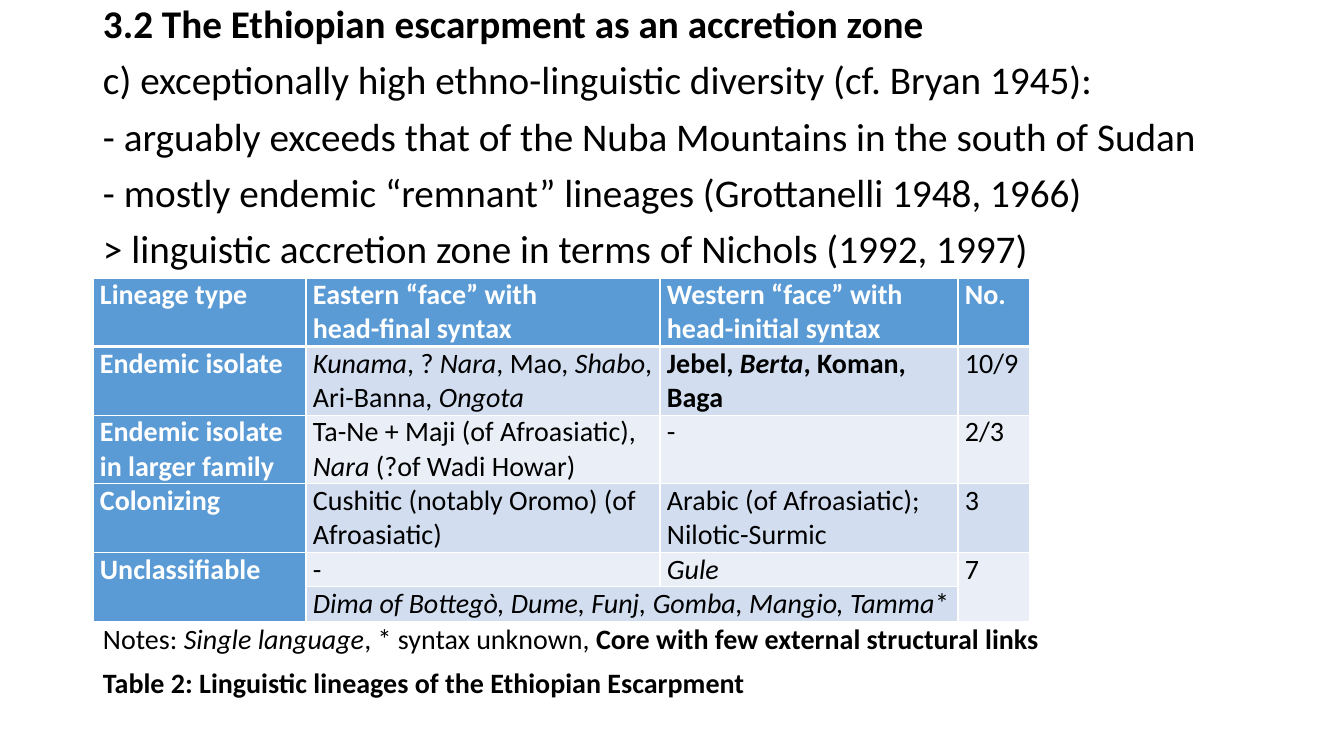
from pptx import Presentation
from pptx import util as u
from pptx.dml.color import RGBColor
from pptx.enum import text
from pptx.oxml import parse_xml
from pptx.oxml.ns import nsdecls

SCALE = 914400 / 100.8
BLUE, WHITE, BLACK = "5B9BD5", "FFFFFF", "000000"
BANDS = ["D2DEEF", "EAEFF7"]
COLS = [213, 354, 298, 72]
ROWS = [68, 68, 68, 68, 34, 34]
HEAD = "3.2 The Ethiopian escarpment as an accretion zone"
POINTS = [
    "c) exceptionally high ethno-linguistic diversity (cf. Bryan 1945):",
    "- arguably exceeds that of the Nuba Mountains in the south of Sudan",
    "- mostly endemic “remnant” lineages (Grottanelli 1948, 1966)",
    "> linguistic accretion zone in terms of Nichols (1992, 1997)",
]
NOTES = [
    "Notes: _Single language_, * syntax unknown, |Core with few external structural links|",
    "|Table 2: Linguistic lineages of the Ethiopian Escarpment|",
]
CELLS = [
    ["Lineage type", "Eastern “face” with\nhead-final syntax",
     "Western “face” with\nhead-initial syntax", "No."],
    ["Endemic isolate", "_Kunama_, ? _Nara_, Mao, _Shabo_, Ari-Banna, _Ongota_",
     "|Jebel, _Berta_, Koman, Baga|", "10/9"],
    ["Endemic isolate in larger family",
     "Ta-Ne + Maji (of Afroasiatic), _Nara_ (?of Wadi Howar)", "-", "2/3"],
    ["Colonizing", "Cushitic (notably Oromo) (of Afroasiatic)",
     "Arabic (of Afroasiatic); Nilotic-Surmic", "3"],
    ["Unclassifiable", "-", "_Gule_", "7"],
    ["", "_Dima of Bottegò, Dume, Funj, Gomba, Mangio, Tamma_*", "", ""],
]


def px(n):
    return u.Emu(round(n * SCALE))


def rgb(code):
    return RGBColor.from_string(code)


def write(frame, lines, size=20, color=BLACK, bold=False, lead=None, gap=0):
    frame.word_wrap = True
    for n, line in enumerate(lines):
        para = frame.add_paragraph() if n else frame.paragraphs[0]
        para.alignment = text.PP_ALIGN.LEFT
        para.line_spacing = lead
        para.space_before = u.Pt(gap)
        for b, part in enumerate(line.split("|")):
            for i, piece in enumerate(part.split("_")):
                if not piece:
                    continue
                run = para.add_run()
                run.text = piece
                font = run.font
                font.name, font.size = "Calibri", u.Pt(size)
                font.bold = bold or b % 2 == 1
                font.italic = i % 2 == 1
                font.color.rgb = rgb(color)


def place(shape, top, high, lines, **form):
    shape.left, shape.top = px(93), px(top)
    shape.width, shape.height = px(1159), px(high)
    frame = shape.text_frame
    frame.auto_size = text.MSO_AUTO_SIZE.NONE
    frame.vertical_anchor = text.MSO_ANCHOR.TOP
    frame.margin_left = frame.margin_right = px(10)
    frame.margin_top = frame.margin_bottom = 0
    write(frame, lines, lead=0.9, gap=10, **form)


def edge(cell, row):
    wide = {"T": 3 if row == 1 else 1, "B": 3 if row == 0 else 1}
    props = cell._tc.get_or_add_tcPr()
    for side in "LRTB":
        props.append(parse_xml(
            f'<a:ln{side} {nsdecls("a")} w="{u.Pt(wide.get(side, 1))}">'
            f'<a:solidFill><a:srgbClr val="{WHITE}"/></a:solidFill></a:ln{side}>'))


def draw_cell(cell, row, col, words):
    key = row == 0 or col == 0
    cell.margin_left = cell.margin_right = px(7)
    cell.margin_top = cell.margin_bottom = 0
    edge(cell, row)
    cell.fill.solid()
    band = BANDS[0 if row == 5 and col < 3 else (row - 1) % 2]
    cell.fill.fore_color.rgb = rgb(BLUE if key else band)
    write(cell.text_frame, words.split("\n"), color=WHITE if key else BLACK, bold=key)


def draw_table(slide):
    table = slide.shapes.add_table(
        len(ROWS), len(COLS), px(93), px(278), px(sum(COLS)), px(sum(ROWS))).table
    table.first_col = True
    for col, wide in zip(table.columns, COLS):
        col.width = px(wide)
    for row, high in zip(table.rows, ROWS):
        row.height = px(high)
    for r, line in enumerate(CELLS):
        for c, words in enumerate(line):
            draw_cell(table.cell(r, c), r, c, words)
    for start, end in [((4, 0), (5, 0)), ((4, 3), (5, 3)), ((5, 1), (5, 2))]:
        table.cell(*start).merge(table.cell(*end))


def add_box(slide, *args, **form):
    place(slide.shapes.add_textbox(0, 0, 0, 0), *args, **form)


def main():
    deck = Presentation()
    deck.slide_width, deck.slide_height = px(1344), px(756)
    slide = deck.slides.add_slide(deck.slide_layouts[5])
    place(slide.shapes.title, 5, 48, [HEAD], size=28, bold=True)
    add_box(slide, 61, 216, POINTS, size=28)
    draw_table(slide)
    add_box(slide, 625, 80, NOTES)
    deck.save("out.pptx")


if __name__ == "__main__":
    main()
